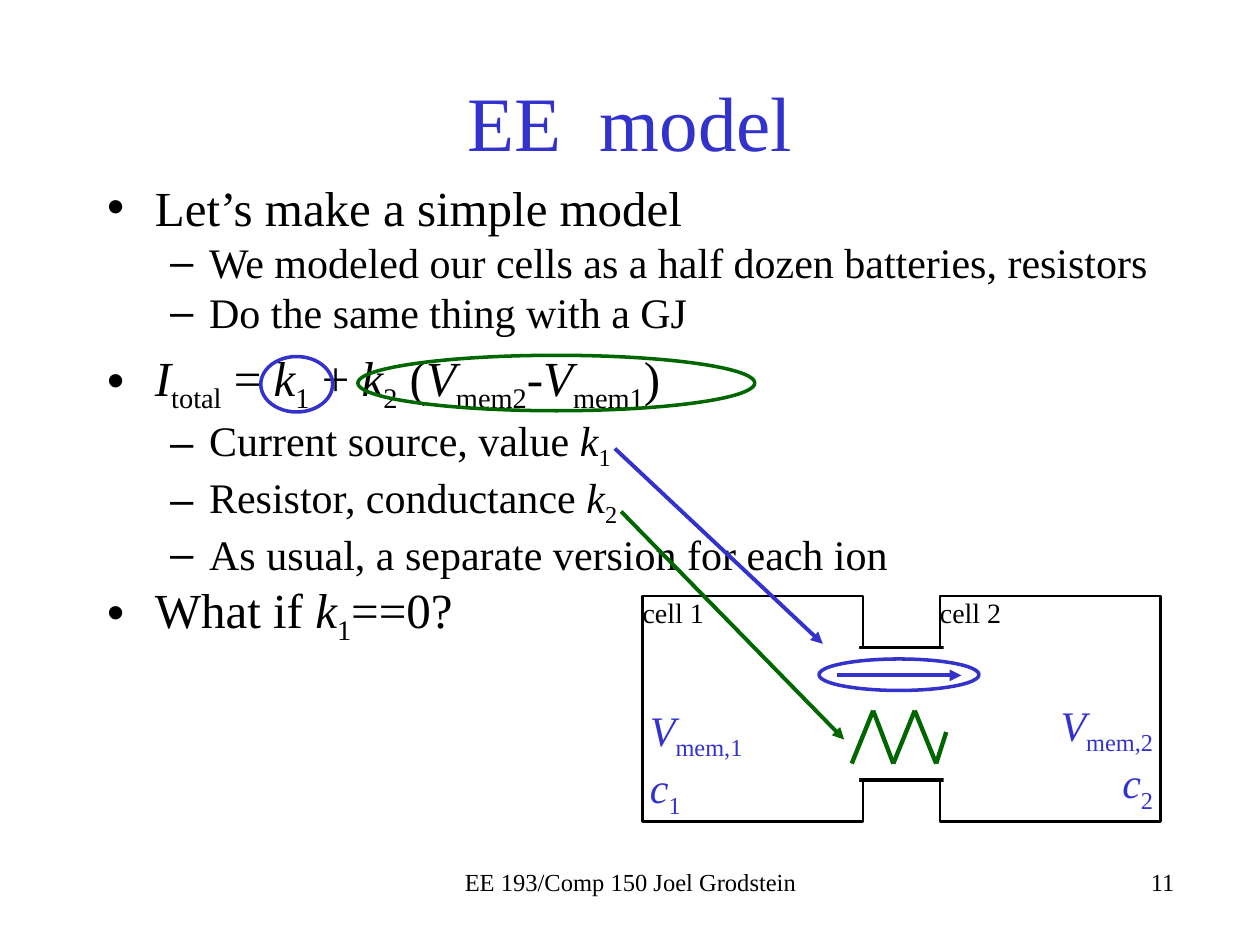
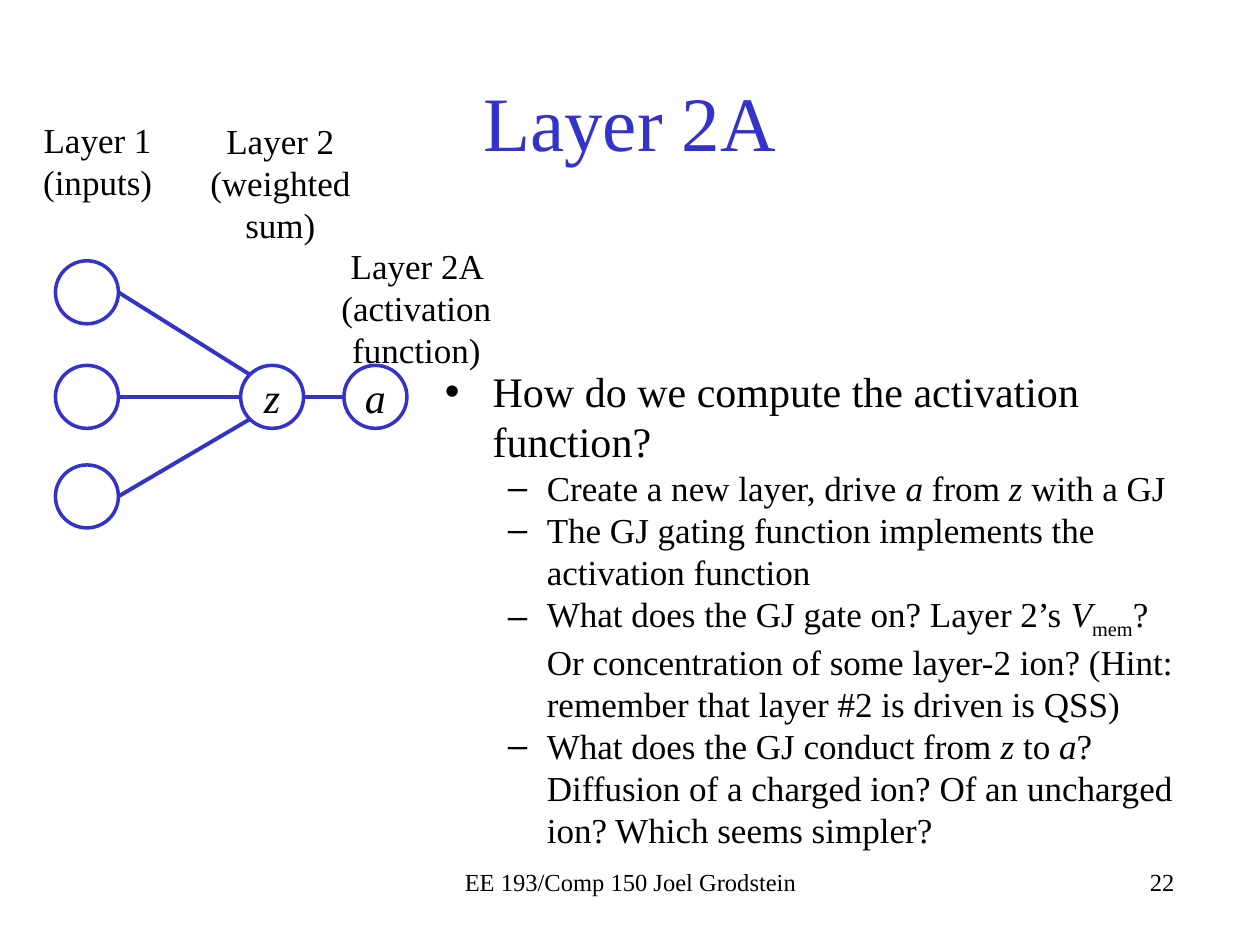
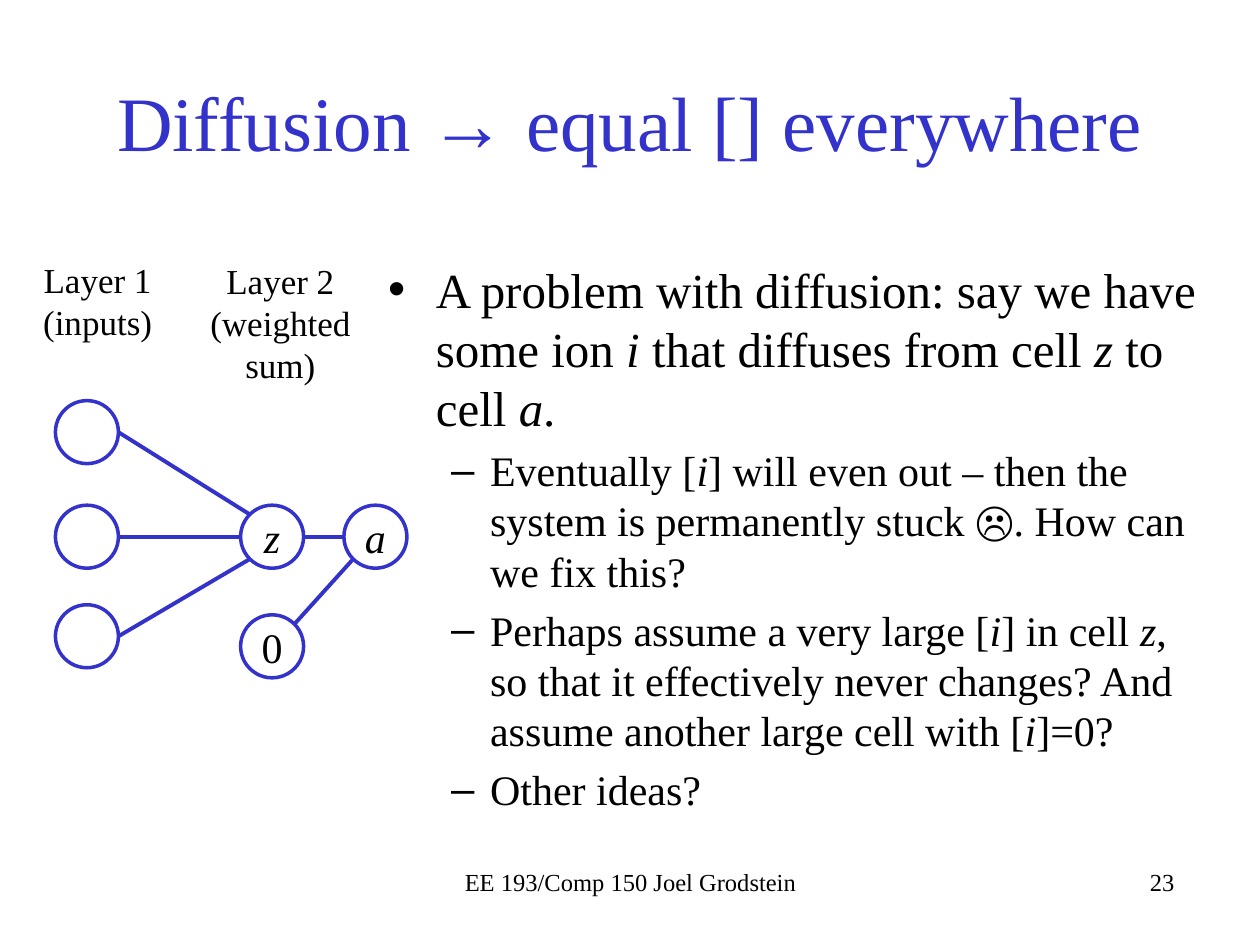
import itertools
import math

import pptx
import pptx.dml.color
import pptx.enum.shapes
import pptx.enum.text
import pptx.oxml.ns
import pptx.util
from lxml import etree

RGB = pptx.dml.color.RGBColor
BLUE = RGB(0x33, 0x33, 0xCC)
GREEN = RGB(0x00, 0x66, 0x00)
BLACK = RGB(0x00, 0x00, 0x00)
WHITE = RGB(0xFF, 0xFF, 0xFF)
FONT = "Times New Roman"
FOOT = "EE 193/Comp 150 Joel Grodstein"

Pt = pptx.util.Pt
inch = pptx.util.Inches
KIND = pptx.enum.shapes.MSO_SHAPE
ALIGN = pptx.enum.text.PP_ALIGN
ANCHOR = pptx.enum.text.MSO_ANCHOR

# Content: *italic*, _subscript_; list items are (level, gap before, text)
MODEL = [
    (0, True, "Let’s make a simple model"),
    (1, False, "We modeled our cells as a half dozen batteries, resistors"),
    (1, False, "Do the same thing with a GJ"),
    (0, True, "*I*_total_ = *k*_1_ + *k*_2_ (*V*_mem2_-*V*_mem1_)"),
    (1, False, "Current source, value *k*_1_"),
    (1, False, "Resistor, conductance *k*_2_"),
    (1, False, "As usual, a separate version for each ion"),
    (0, False, "What if *k*_1_==0?"),
]
LAYER = [
    (0, True, "How do we compute the activation function?"),
    (1, False, "Create a new layer, drive *a* from *z* with a GJ"),
    (1, False, "The GJ gating function implements the activation function"),
    (1, False, "What does the GJ gate on? Layer 2’s *V*_mem_? Or concentration of "
               "some layer-2 ion? (Hint: remember that layer #2 is driven is QSS)"),
    (1, False, "What does the GJ conduct from *z* to *a*? Diffusion of a charged ion? "
               "Of an uncharged ion? Which seems simpler?"),
]
SPREAD = [
    (0, True, "A problem with diffusion: say we have some ion *i* that diffuses "
              "from cell *z *to cell *a*."),
    (1, True, "Eventually [*i*] will even out – then the system is permanently "
              "stuck ☹. How can we fix this?"),
    (1, True, "Perhaps assume a very large [*i*] in cell *z*, so that it effectively "
              "never changes? And assume another large cell with [*i*]=0?"),
    (1, True, "Other ideas?"),
]
INDENT = [(0.38, -0.38), (0.81, -0.31)]

# Network: columns of node centres, rows below the top label
COLS = {"in": 0.69, "z": 2.16, "a": 2.98}
ROWS = (1.43, 2.26, 3.05)
ZERO = 3.13
R = 0.25
LABELS = [(0.24, 0, 1.07, "Layer 1 (inputs)"),
          (1.43, 0.01, 1.59, "Layer 2 (weighted sum)")]
ACTIVE = (2.51, 1, 1.59, "Layer 2A (activation function)")


def write(par, text, size, color=BLACK, align=None):
    """Fill a paragraph, turning marks into italic and subscript runs."""
    par.font.name, par.font.size, par.font.color.rgb = FONT, Pt(size), color
    if align is not None:
        par.alignment = align
    for i, part in enumerate(text.split("*")):
        for j, bit in enumerate(part.split("_")):
            if bit:
                run = par.add_run()
                run.text = bit
                if i % 2:
                    run.font.italic = True
                if j % 2:
                    run.font._element.set("baseline", "-25000")


def place(shape, box):
    shape.left, shape.top, shape.width, shape.height = map(inch, box)


def label(page, box, lines, size, color=BLACK, align=ALIGN.CENTER, side=0.1):
    frame = page.shapes.add_textbox(*map(inch, box)).text_frame
    frame.word_wrap = True
    frame.margin_left = frame.margin_right = inch(side)
    for i, text in enumerate(lines):
        par = frame.add_paragraph() if i else frame.paragraphs[0]
        write(par, text, size, color, align)


def draw(page, kind, box, line=None, width=2, fill=None):
    shape = page.shapes.add_shape(kind, *map(inch, box))
    shape.shadow.inherit = False
    if fill is None:
        shape.fill.background()
    else:
        shape.fill.solid()
        shape.fill.fore_color.rgb = fill
    if line is None:
        shape.line.fill.background()
    else:
        shape.line.color.rgb, shape.line.width = line, Pt(width)
    frame = shape.text_frame
    frame.margin_left = frame.margin_right = 0
    frame.margin_top = frame.margin_bottom = 0
    return shape


def join(page, start, end, color=BLUE, width=2.25, arrow=False):
    line = page.shapes.add_connector(
        pptx.enum.shapes.MSO_CONNECTOR.STRAIGHT, *map(inch, start + end))
    line.line.color.rgb, line.line.width = color, Pt(width)
    qn = pptx.oxml.ns.qn
    if arrow:
        etree.SubElement(line.line._get_or_add_ln(), qn("a:tailEnd"), type="triangle")
    etree.SubElement(line._element.spPr, qn("a:effectLst"))


def start(deck, title, number, box, items, sizes):
    """Add a slide with its title, list, footer and number."""
    page = deck.slides.add_slide(deck.slide_layouts[1])
    head, body = page.placeholders
    place(head, (0.75, 0.33, 8.5, 1.25))
    head.text_frame.vertical_anchor = ANCHOR.MIDDLE
    write(head.text_frame.paragraphs[0], title, 44, BLUE, ALIGN.CENTER)

    place(body, box)
    frame = body.text_frame
    frame.auto_size = pptx.enum.text.MSO_AUTO_SIZE.NONE
    for i, (level, gap, text) in enumerate(items):
        par = frame.add_paragraph() if i else frame.paragraphs[0]
        par.level = level
        par.space_before = Pt(0.2 * sizes[level] if gap else 0)
        props = par._p.get_or_add_pPr()
        for key, value in zip(("marL", "indent"), INDENT[level]):
            props.set(key, str(inch(value)))
        write(par, text, sizes[level])

    label(page, (3.42, 6.83, 3.17, 0.34), [FOOT], 14)
    label(page, (6.25, 6.83, 3.17, 0.5), [str(number)], 14, align=ALIGN.RIGHT)
    return page


def cells(page):
    """Two cells joined by a gap junction."""
    for x, name in ((5.1, "cell 1"), (7.46, "cell 2")):
        cell = draw(page, KIND.RECTANGLE, (x, 4.73, 1.75, 1.79), BLACK, 1.5, WHITE)
        cell.text_frame.vertical_anchor = ANCHOR.TOP
        write(cell.text_frame.paragraphs[0], name, 16, align=ALIGN.LEFT)
    draw(page, KIND.RECTANGLE, (6.66, 5.14, 1.02, 1.05), BLACK, 2, WHITE)
    for box in ((6.36, 4.99, 0.46, 1.33), (7.49, 5, 0.47, 1.41)):
        draw(page, KIND.RECTANGLE, box, fill=WHITE)
    for n, x, y, align in ((1, 5.06, 5.54, ALIGN.LEFT), (2, 8.03, 5.5, ALIGN.RIGHT)):
        label(page, (x, y, 1.22, 0.91), [f"*V*_mem,{n}_", f"*c*_{n}_"], 24, BLUE, align)

    # Current source and resistor
    join(page, (6.64, 5.36), (7.63, 5.36), arrow=True)
    draw(page, KIND.OVAL, (6.5, 5.23, 1.27, 0.25), BLUE)
    zigzag = [(6.76, 6.06), (6.93, 5.64), (7.09, 6.06),
              (7.26, 5.64), (7.43, 6.06), (7.51, 5.81)]
    for a, b in itertools.pairwise(zigzag):
        join(page, a, b, GREEN, 2.5)

    # Terms of the formula and what they stand for
    join(page, (4.88, 3.56), (6.53, 5.11), BLUE, arrow=True)
    join(page, (4.93, 4.06), (6.7, 5.87), GREEN, arrow=True)
    draw(page, KIND.OVAL, (2.07, 2.83, 0.57, 0.44), BLUE)
    draw(page, KIND.OVAL, (2.84, 2.82, 3.15, 0.44), GREEN)


def rim(node, angle):
    turn = math.radians(angle)
    return node[0] + R * math.cos(turn), node[1] + R * math.sin(turn)


def network(page, top, labels, zero=False):
    for x, y, width, text in labels:
        label(page, (x, top + y, width, 1), [text], 20, side=0)
    inputs = [(COLS["in"], top + row) for row in ROWS]
    z, a = ((COLS[key], top + ROWS[1]) for key in "za")
    nodes = [(node, "") for node in inputs] + [(z, "*z*"), (a, "*a*")]
    links = [(rim(node, 0), rim(z, angle))
             for node, angle in zip(inputs, (225, 180, 135))]
    links.append((rim(z, 0), rim(a, 180)))
    if zero:
        low = (COLS["z"], top + ZERO)
        nodes.append((low, "0"))
        links.append((rim(low, -45), rim(a, 135)))
    for (x, y), text in nodes:
        frame = draw(page, KIND.OVAL, (x - R, y - R, 2 * R, 2 * R), BLUE).text_frame
        frame.vertical_anchor = ANCHOR.MIDDLE
        if text:
            write(frame.paragraphs[0], text, 24, align=ALIGN.CENTER)
    for link in links:
        join(page, *link)


def main():
    deck = pptx.Presentation()
    deck.slide_width, deck.slide_height = inch(10), inch(7.5)
    cells(start(deck, "EE  model", 11, (0.75, 1.36, 8.5, 3.19), MODEL, (28, 24)))
    page = start(deck, "Layer 2A", 22, (3.43, 2.85, 5.99, 3.73), LAYER, (24, 20))
    network(page, 0.89, LABELS + [ACTIVE])
    page = start(deck, "Diffusion → equal [] everywhere", 23,
                 (2.98, 2.01, 6.75, 4.77), SPREAD, (28, 24))
    network(page, 2, LABELS, zero=True)
    deck.save("out.pptx")


if __name__ == "__main__":
    main()
